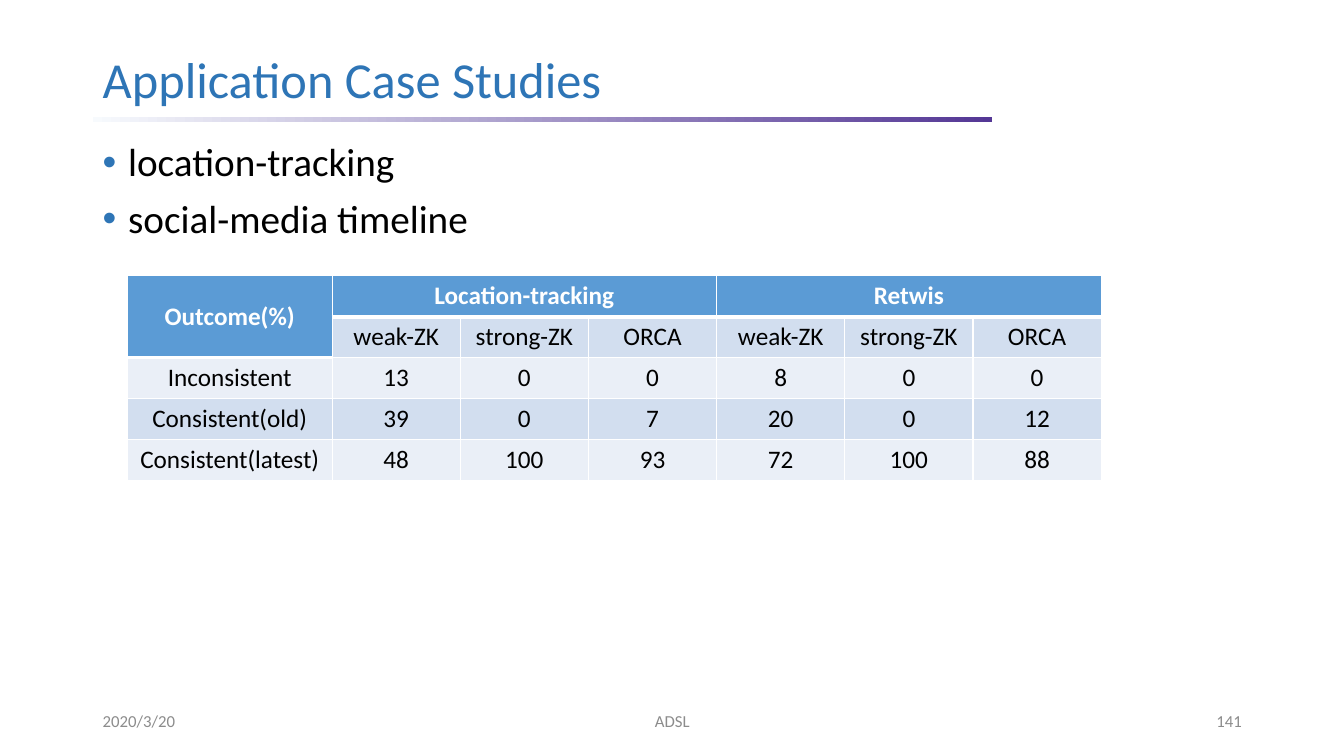
import pptx
import pptx.util
import pptx.dml.color
import pptx.enum.shapes
import pptx.enum.text
import pptx.oxml
import pptx.oxml.ns

Cm = pptx.util.Cm
Pt = pptx.util.Pt
RGBColor = pptx.dml.color.RGBColor
Align = pptx.enum.text.PP_ALIGN
Anchor = pptx.enum.text.MSO_ANCHOR

FONT = "Calibri"
TITLE_BLUE = RGBColor(0x2E, 0x75, 0xB6)
BLACK = RGBColor(0, 0, 0)
WHITE = RGBColor(0xFF, 0xFF, 0xFF)
GREY = RGBColor(0x8C, 0x8C, 0x8C)
HEADER_BLUE = RGBColor(0x5B, 0x9B, 0xD5)
BANDS = (RGBColor(0xEA, 0xEF, 0xF7), RGBColor(0xD2, 0xDE, 0xEF))
RULE_START = RGBColor(0xF7, 0xFA, 0xFD)
RULE_END = RGBColor(0x54, 0x37, 0x95)

TITLE = "Application Case Studies"
TOPICS = ["location-tracking", "social-media timeline"]
SYSTEMS = ["weak-ZK", "strong-ZK", "ORCA"]
OUTCOMES = [
    ["Outcome(%)", "Location-tracking", "", "", "Retwis", "", ""],
    [""] + SYSTEMS * 2,
    ["Inconsistent", 13, 0, 0, 8, 0, 0],
    ["Consistent(old)", 39, 0, 7, 20, 0, 12],
    ["Consistent(latest)", 48, 100, 93, 72, 100, 88],
]
MERGES = [((0, 0), (1, 0)), ((0, 1), (0, 3)), ((0, 4), (0, 6))]
FOOTERS = [
    ("2020/3/20", 2.34, 7.62, Align.LEFT),
    ("ADSL", 11.23, 11.43, Align.CENTER),
    ("141", 23.93, 7.62, Align.RIGHT),
]
LEFT = 2.34
LABEL_WIDTH, VALUE_WIDTH, ROW_HEIGHT = 5.16, 3.23, 1.03


def set_font(paragraph, size, color, bold=False):
    paragraph.font.name = FONT
    paragraph.font.size = Pt(size)
    paragraph.font.color.rgb = color
    paragraph.font.bold = bold


def add_text(slide, lines, box, size, color, align=Align.LEFT, anchor=Anchor.MIDDLE):
    shape = slide.shapes.add_textbox(*(Cm(length) for length in box))
    frame = shape.text_frame
    frame.word_wrap = True
    frame.vertical_anchor = anchor
    frame.text = "\n".join(lines)
    for paragraph in frame.paragraphs:
        paragraph.alignment = align
    return frame.paragraphs


def add_bullet(paragraph):
    properties = paragraph._p.get_or_add_pPr()
    properties.set("marL", str(Cm(0.64)))
    properties.set("indent", str(-Cm(0.64)))
    namespace = pptx.oxml.ns.nsdecls("a")
    for xml in (
        f'<a:buClr {namespace}><a:srgbClr val="{TITLE_BLUE}"/></a:buClr>',
        f'<a:buFont {namespace} typeface="Arial"/>',
        f'<a:buChar {namespace} char="•"/>',
    ):
        properties.append(pptx.oxml.parse_xml(xml))


def add_borders(cell, top, bottom):
    namespace = pptx.oxml.ns.nsdecls("a")
    for side, width in (("L", 1), ("R", 1), ("T", top), ("B", bottom)):
        cell._tc.get_or_add_tcPr().append(pptx.oxml.parse_xml(
            f'<a:ln{side} {namespace} w="{Pt(width)}"><a:solidFill>'
            f'<a:srgbClr val="{WHITE}"/></a:solidFill></a:ln{side}>'))


def is_header(row, column):
    return row == 0 or (row == 1 and column == 0)


def add_title(slide):
    rule = slide.shapes.add_shape(
        pptx.enum.shapes.MSO_SHAPE.RECTANGLE, Cm(LEFT), Cm(2.95), Cm(22.66), Cm(0.13))
    rule.shadow.inherit = False
    rule.line.fill.background()
    rule.fill.gradient()
    rule.fill.gradient_angle = 0
    for stop, color in zip(rule.fill.gradient_stops, (RULE_START, RULE_END)):
        stop.color.rgb = color
    for paragraph in add_text(slide, [TITLE], (LEFT, 1.19, 22.38, 1.75), 36, TITLE_BLUE):
        paragraph.line_spacing = 0.9
        set_font(paragraph, 36, TITLE_BLUE)


def add_topics(slide):
    paragraphs = add_text(
        slide, TOPICS, (LEFT, 3.48, 29.21, 13.72), 28, BLACK, anchor=Anchor.TOP)
    for index, paragraph in enumerate(paragraphs):
        paragraph.line_spacing = 0.9
        if index:
            paragraph.space_before = Pt(10)
        add_bullet(paragraph)
        set_font(paragraph, 28, BLACK)


def add_outcomes(slide):
    rows, columns = len(OUTCOMES), len(OUTCOMES[0])
    widths = [LABEL_WIDTH] + [VALUE_WIDTH] * (columns - 1)
    table = slide.shapes.add_table(
        rows, columns, Cm(3.21), Cm(6.95), Cm(sum(widths)), Cm(rows * ROW_HEIGHT)).table
    table.horz_banding = False
    for column, width in zip(table.columns, widths):
        column.width = Cm(width)
    for row in table.rows:
        row.height = Cm(ROW_HEIGHT)
    for start, end in MERGES:
        table.cell(*start).merge(table.cell(*end))
    for row, values in enumerate(OUTCOMES):
        for column, value in enumerate(values):
            cell = table.cell(row, column)
            header = is_header(row, column)
            below_header = row > 0 and not header and is_header(row - 1, column)
            add_borders(cell, 3 if below_header else 1, 3 if header else 1)
            cell.fill.solid()
            cell.fill.fore_color.rgb = HEADER_BLUE if header else BANDS[row % 2]
            cell.vertical_anchor = Anchor.MIDDLE
            cell.text = str(value)
            paragraph = cell.text_frame.paragraphs[0]
            paragraph.alignment = Align.CENTER
            set_font(paragraph, 18, WHITE if header else BLACK, header)


def add_footers(slide):
    for text, left, width, align in FOOTERS:
        for paragraph in add_text(slide, [text], (left, 17.65, width, 1.02), 12, GREY, align):
            set_font(paragraph, 12, GREY)


def main():
    presentation = pptx.Presentation()
    presentation.slide_width = Cm(33.87)
    presentation.slide_height = Cm(19.05)
    slide = presentation.slides.add_slide(presentation.slide_layouts[6])
    add_title(slide)
    add_topics(slide)
    add_outcomes(slide)
    add_footers(slide)
    presentation.save("out.pptx")


if __name__ == "__main__":
    main()
